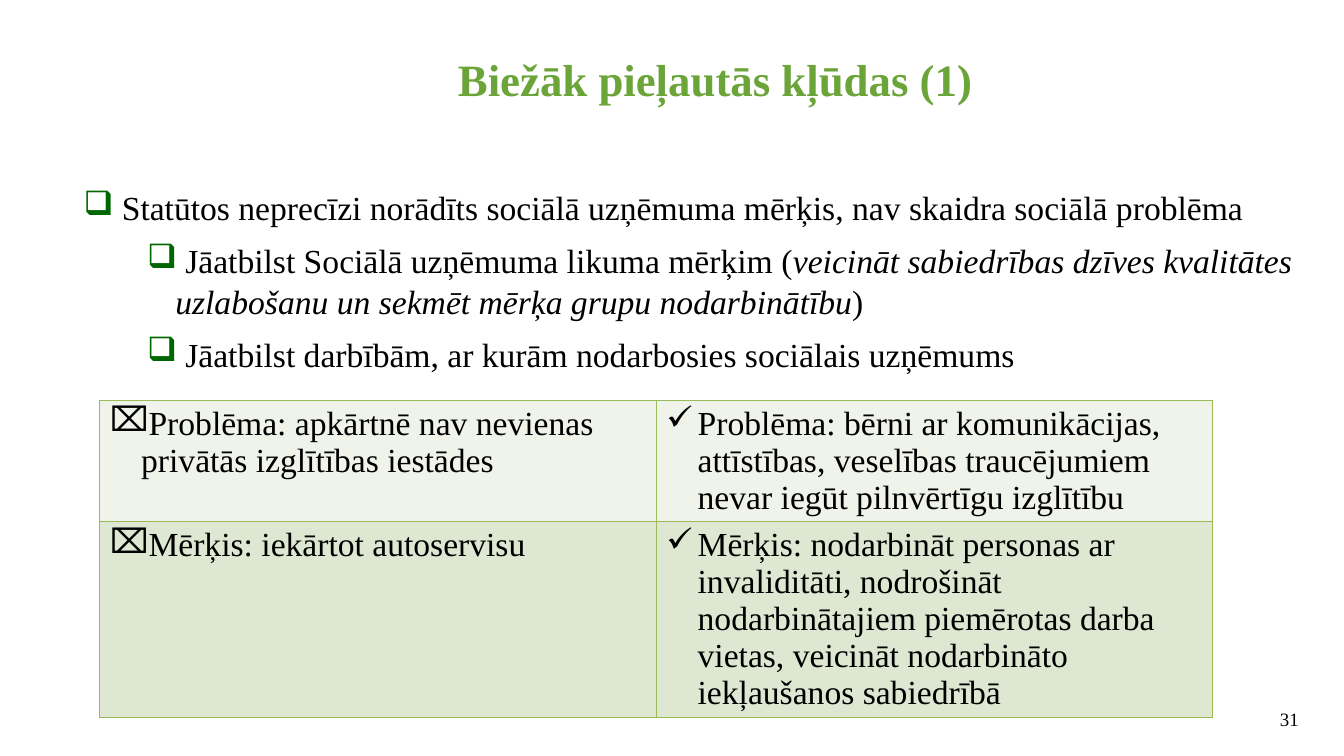
from lxml.etree import SubElement
from pptx import Presentation
from pptx.dml.color import RGBColor
from pptx.enum.text import MSO_ANCHOR, PP_ALIGN
from pptx.oxml import parse_xml
from pptx.oxml.ns import nsdecls, qn
from pptx.util import Pt

PX = 9144
FONT = "Times New Roman"
BLACK = "000000"
TITLE_GREEN = "6BA439"
BULLET_GREEN = "006600"
BORDER_GREEN = "9BBB59"

GOALS = [
    (0, [" Statūtos neprecīzi norādīts sociālā uzņēmuma mērķis, nav skaidra sociālā problēma"]),
    (1, [" Jāatbilst Sociālā uzņēmuma likuma mērķim (",
         "veicināt sabiedrības dzīves kvalitātes uzlabošanu un sekmēt mērķa grupu nodarbinātību",
         ")"]),
    (1, [" Jāatbilst darbībām, ar kurām nodarbosies sociālais uzņēmums"]),
]
EXAMPLES = [
    ("EFF3EA", 120, [
        "Problēma: apkārtnē nav nevienas privātās izglītības iestādes",
        "Problēma: bērni ar komunikācijas, attīstības, veselības traucējumiem "
        "nevar iegūt pilnvērtīgu izglītību"]),
    ("DEE7D1", 194, [
        "Mērķis: iekārtot autoservisu",
        "Mērķis: nodarbināt personas ar invaliditāti, nodrošināt nodarbinātajiem "
        "piemērotas darba vietas, veicināt nodarbināto iekļaušanos sabiedrībā"]),
]


def px(*lengths):
    return [length * PX for length in lengths]


def color(value):
    return RGBColor.from_string(value)


def style(font, size, value=BLACK, bold=False, italic=False):
    font.name = FONT
    font.size = Pt(size)
    font.color.rgb = color(value)
    font.bold = bold
    font.italic = italic


def add_bullet(para, symbol, margin, hanging, value=BLACK):
    properties = para._p.get_or_add_pPr()
    properties.set("marL", str(margin * PX))
    properties.set("indent", str(-hanging * PX))
    bullet_color = SubElement(properties, qn("a:buClr"))
    SubElement(bullet_color, qn("a:srgbClr"), val=value)
    SubElement(properties, qn("a:buChar"), char=symbol)


def add_borders(cell):
    properties = cell._tc.get_or_add_tcPr()
    for index, side in enumerate(("lnL", "lnR", "lnT", "lnB")):
        properties.insert(index, parse_xml(
            f'<a:{side} {nsdecls("a")} w="12700"><a:solidFill>'
            f'<a:srgbClr val="{BORDER_GREEN}"/></a:solidFill></a:{side}>'))


def place_title(page, box):
    title = page.shapes.title
    title.left, title.top, title.width, title.height = px(*box)
    frame = title.text_frame
    frame.text = "Biežāk pieļautās kļūdas (1)"
    frame.vertical_anchor = MSO_ANCHOR.MIDDLE
    para = frame.paragraphs[0]
    para.alignment = PP_ALIGN.CENTER
    style(para.runs[0].font, 32, TITLE_GREEN, bold=True)


def place_goals(page, box):
    frame = page.shapes.add_textbox(*px(*box)).text_frame
    frame.word_wrap = True
    for index, (level, parts) in enumerate(GOALS):
        para = frame.add_paragraph() if index else frame.paragraphs[0]
        para.level = level
        add_bullet(para, "❑", 28 + 63 * level, 28, BULLET_GREEN)
        para.line_spacing = Pt(28.8)
        para.space_before = Pt(9 if index else 0)
        for position, part in enumerate(parts):
            span = para.add_run()
            span.text = part
            style(span.font, 24, italic=position == 1)


def place_examples(page, box):
    table = page.shapes.add_table(len(EXAMPLES), 2, *px(*box)).table
    table.first_row = False
    table.horz_banding = False
    for row, (fill, height, texts) in zip(table.rows, EXAMPLES):
        row.height = height * PX
        for cell, symbol, text in zip(row.cells, "⌧✓", texts):
            cell.fill.solid()
            cell.fill.fore_color.rgb = color(fill)
            add_borders(cell)
            para = cell.text_frame.paragraphs[0]
            para.text = text
            add_bullet(para, symbol, 31, 31)
            para.line_spacing = Pt(26.5)
            style(para.runs[0].font, 24)


def place_number(page, box):
    frame = page.shapes.add_textbox(*px(*box)).text_frame
    frame.word_wrap = True
    para = frame.paragraphs[0]
    para.text = "31"
    para.alignment = PP_ALIGN.RIGHT
    style(para.runs[0].font, 13.5)


def main():
    deck = Presentation()
    deck.slide_width, deck.slide_height = px(1333, 750)
    page = deck.slides.add_slide(deck.slide_layouts[5])
    place_title(page, (437, 46, 545, 64))
    place_goals(page, (73, 181, 1225, 194))
    place_number(page, (1065, 697, 233, 40))
    place_examples(page, (99, 397, 1104, 314))
    deck.save("out.pptx")


if __name__ == "__main__":
    main()
